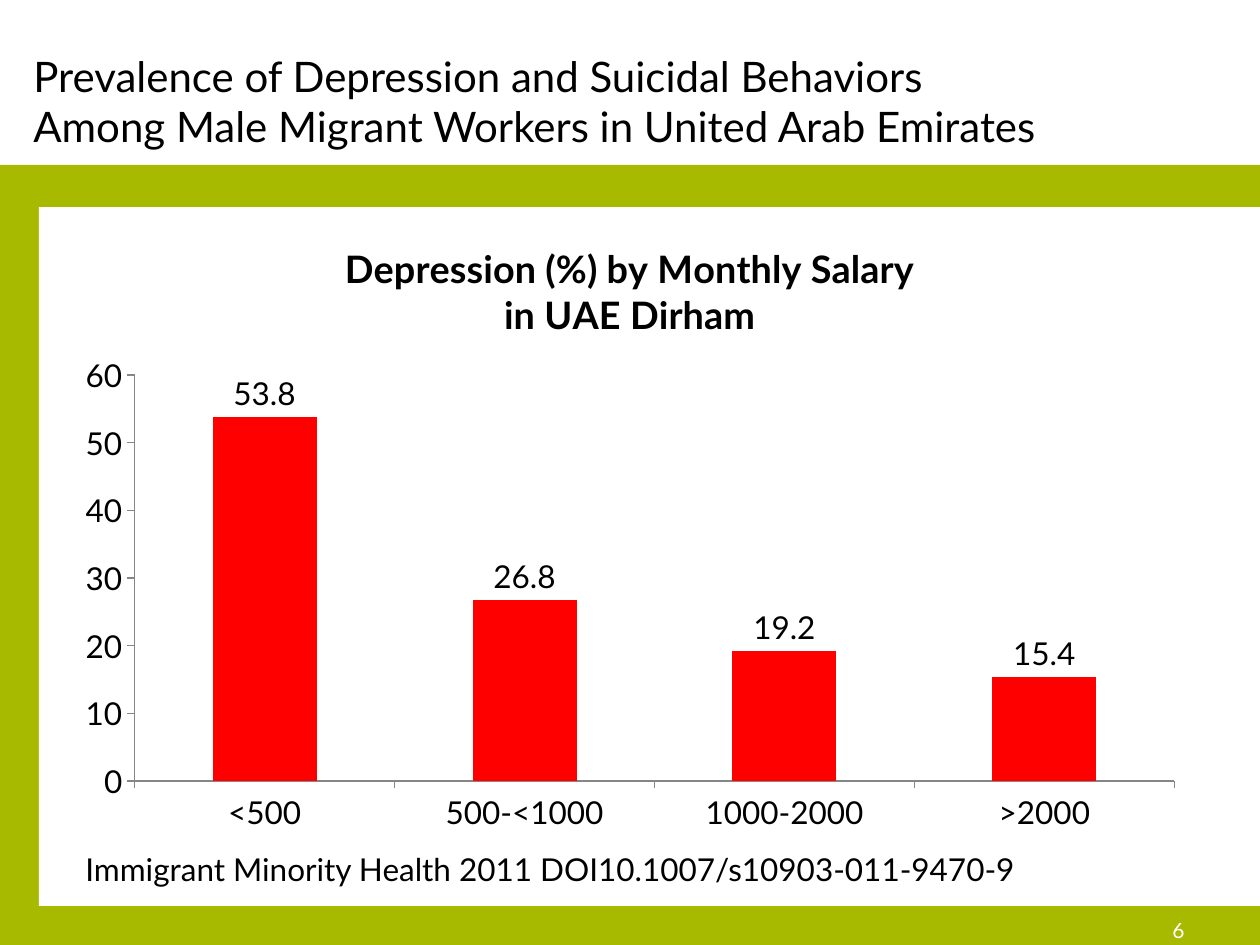
"""Build the slide on depression by monthly salary among migrant workers."""
from pptx import Presentation
from pptx.chart.data import CategoryChartData
from pptx.dml.color import RGBColor
from pptx.enum.chart import XL_CHART_TYPE as ChartType, XL_LABEL_POSITION as LabelPos, XL_TICK_MARK as Tick
from pptx.enum.shapes import MSO_SHAPE as Shape
from pptx.enum.text import MSO_ANCHOR as Anchor, PP_ALIGN as Align
from pptx.util import Emu, Pt

HEADING = "Prevalence of Depression and Suicidal Behaviors Among Male Migrant Workers in United Arab Emirates"
CHART_TITLE = ["Depression (%) by Monthly Salary", "in UAE Dirham"]
DEPRESSION = {"<500": 53.8, "500-<1000": 26.8, "1000-2000": 19.2, ">2000": 15.4}
CITATION = "Immigrant Minority Health 2011 DOI10.1007/s10903-011-9470-9"
PAGE = "6"

COLORS = {"frame": "A8BA00", "panel": "FFFFFF", "ink": "000000", "bar": "FF0000", "axis": "868686"}
FONT = "Lato"
PX = 914400 // 126
WIDTH, HEIGHT = 1260, 945
PANELS = [("frame", (0, 165, WIDTH, HEIGHT - 165)), ("panel", (39, 207, WIDTH - 39, 699))]


def px(*lengths):
    return [Emu(length * PX) for length in lengths]


def color(name):
    return RGBColor.from_string(COLORS[name])


def style(font, size, ink="ink", bold=False):
    font.name, font.size, font.bold = FONT, Pt(size), bold
    font.color.rgb = color(ink)


def add_text(slide, text, box, size, ink="ink", align=Align.LEFT, anchor=Anchor.MIDDLE):
    frame = slide.shapes.add_textbox(*px(*box)).text_frame
    frame.word_wrap = True
    frame.vertical_anchor = anchor
    paragraph = frame.paragraphs[0]
    paragraph.alignment = align
    run = paragraph.add_run()
    run.text = text
    style(run.font, size, ink)


def add_panel(slide, fill, box):
    panel = slide.shapes.add_shape(Shape.RECTANGLE, *px(*box))
    panel.shadow.inherit = False
    panel.fill.solid()
    panel.fill.fore_color.rgb = color(fill)
    panel.line.fill.background()


def add_salary_chart(slide, box):
    salaries = CategoryChartData()
    salaries.categories = list(DEPRESSION)
    salaries.add_series("Series 1", list(DEPRESSION.values()))
    chart = slide.shapes.add_chart(ChartType.COLUMN_CLUSTERED, *px(*box), salaries).chart
    style(chart.font, 18)
    chart.has_legend = False

    chart.has_title = True
    title = chart.chart_title.text_frame
    for index, line in enumerate(CHART_TITLE):
        paragraph = title.add_paragraph() if index else title.paragraphs[0]
        run = paragraph.add_run()
        run.text = line
        style(run.font, 21.6, bold=True)

    for axis in (chart.category_axis, chart.value_axis):
        axis.has_major_gridlines = False
        axis.major_tick_mark = Tick.OUTSIDE
        axis.minor_tick_mark = Tick.NONE
        axis.format.line.color.rgb = color("axis")
        axis.format.line.width = Pt(0.75)
    chart.value_axis.minimum_scale = 0
    chart.value_axis.maximum_scale = 60
    chart.value_axis.major_unit = 10

    plot = chart.plots[0]
    plot.gap_width = 150
    plot.vary_by_categories = False
    bars = plot.series[0]
    bars.format.fill.solid()
    bars.format.fill.fore_color.rgb = color("bar")
    plot.has_data_labels = True
    labels = plot.data_labels
    labels.show_value = True
    labels.position = LabelPos.OUTSIDE_END
    style(labels.font, 18)


def main():
    deck = Presentation()
    deck.slide_width, deck.slide_height = px(WIDTH, HEIGHT)
    slide = deck.slides.add_slide(deck.slide_layouts[6])
    for fill, box in PANELS:
        add_panel(slide, fill, box)
    add_text(slide, HEADING, (21, 38, 1050, 126), 24)
    add_salary_chart(slide, (63, 220, 1134, 624))
    add_text(slide, PAGE, (903, 905, 294, 50), 12, ink="panel", align=Align.RIGHT)
    add_text(slide, CITATION, (73, 844, 1050, 50), 18, anchor=Anchor.TOP)
    deck.save("out.pptx")


if __name__ == "__main__":
    main()
